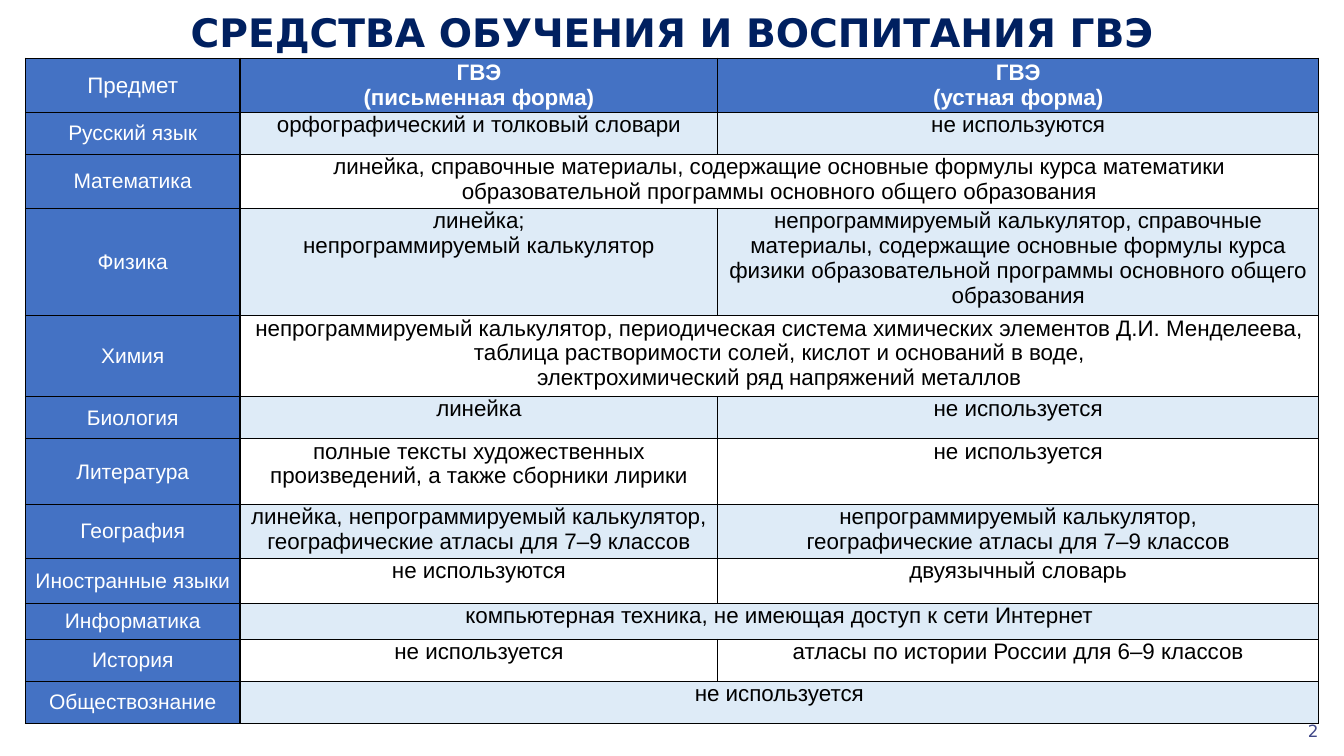
from dataclasses import dataclass

from lxml.etree import SubElement
from pptx import Presentation
from pptx.dml.color import RGBColor
from pptx.enum.text import MSO_ANCHOR as Anchor, PP_ALIGN as Align
from pptx.oxml.ns import qn
from pptx.util import Cm, Pt


@dataclass(frozen=True)
class Theme:
    """Colours, fonts and type sizes of the slide."""
    navy: str = "002060"
    number: str = "404888"
    header: str = "4472C4"
    band: str = "DEEBF7"
    white: str = "FFFFFF"
    black: str = "000000"
    heading_font: str = "DejaVu Sans"
    table_font: str = "Arial"
    title_size: int = 28
    body_size: int = 16
    subject_size: int = 15
    number_size: int = 12
    border: int = 1


THEME = Theme()
COLUMNS = (5.41, 12.04, 15.14)
HEADINGS = ("Предмет", ("ГВЭ", "(письменная форма)"), ("ГВЭ", "(устная форма)"))
SUBJECTS = (
    (1.06, "Русский язык", ["орфографический и толковый словари"], ["не используются"]),
    (1.36, "Математика", ["линейка, справочные материалы, содержащие основные формулы "
                          "курса математики образовательной программы основного "
                          "общего образования"], None),
    (2.7, "Физика", ["линейка;", "непрограммируемый калькулятор"],
     ["непрограммируемый калькулятор, справочные материалы, содержащие основные формулы "
      "курса физики образовательной программы основного общего образования"]),
    (2.04, "Химия", ["непрограммируемый калькулятор, периодическая система химических "
                     "элементов Д.И. Менделеева,",
                     "таблица растворимости солей, кислот и оснований в воде,\n"
                     "электрохимический ряд напряжений металлов"], None),
    (1.06, "Биология", ["линейка"], ["не используется"]),
    (1.66, "Литература", ["полные тексты художественных произведений, а также "
                          "сборники лирики"], ["не используется"]),
    (1.34, "География", ["линейка, непрограммируемый калькулятор,",
                         "географические атласы для 7–9 классов"],
     ["непрограммируемый калькулятор,", "географические атласы для 7–9 классов"]),
    (1.13, "Иностранные языки", ["не используются"], ["двуязычный словарь"]),
    (0.91, "Информатика", ["компьютерная техника, не имеющая доступ к сети Интернет"], None),
    (1.06, "История", ["не используется"], ["атласы по истории России для 6–9 классов"]),
    (1.06, "Обществознание", ["не используется"], None),
)


def write(frame, paragraphs, size, colour, font, bold=False, align=Align.CENTER):
    """Fill a text frame run by run, breaking lines at newlines."""
    for index, text in enumerate(paragraphs):
        paragraph = frame.add_paragraph() if index else frame.paragraphs[0]
        paragraph.alignment = align
        for position, line in enumerate(text.split("\n")):
            if position:
                paragraph.add_line_break()
            run = paragraph.add_run()
            run.text = line
            run.font.size = Pt(size)
            run.font.name = font
            run.font.bold = bold
            run.font.color.rgb = RGBColor.from_string(colour)


def draw_label(slide, box, text, size, colour, align, anchor, bold=False):
    """Place one line of heading-font text in the box."""
    frame = slide.shapes.add_textbox(*map(Cm, box)).text_frame
    frame.word_wrap = True
    frame.vertical_anchor = anchor
    write(frame, [text], size, colour, THEME.heading_font, bold, align)


def style_cell(cell, colour):
    """Set the fill, margins and four borders of a cell."""
    cell.fill.solid()
    cell.fill.fore_color.rgb = RGBColor.from_string(colour)
    cell.margin_left = cell.margin_right = Cm(0.08)
    cell.margin_top = cell.margin_bottom = 0
    properties = cell._tc.get_or_add_tcPr()
    for index, side in enumerate(("lnL", "lnR", "lnT", "lnB")):
        border = SubElement(properties, qn(f"a:{side}"), w=str(Pt(THEME.border)))
        line_fill = SubElement(border, qn("a:solidFill"))
        SubElement(line_fill, qn("a:srgbClr"), val=THEME.black)
        properties.insert(index, border)


def draw_aids_table(slide, left, top):
    """Draw the table of permitted aids from the given corner."""
    heights = (1.36, *(subject[0] for subject in SUBJECTS))
    table = slide.shapes.add_table(
        len(heights), len(COLUMNS), Cm(left), Cm(top),
        Cm(sum(COLUMNS)), Cm(sum(heights))).table
    for column, width in zip(table.columns, COLUMNS):
        column.width = Cm(width)
    for index, (row, height) in enumerate(zip(table.rows, heights)):
        row.height = Cm(height)
        body = THEME.band if index % 2 else THEME.white
        for position, cell in enumerate(row.cells):
            style_cell(cell, body if index and position else THEME.header)

    subject_heading, *form_headings = HEADINGS
    for position, lines in enumerate(([subject_heading], *form_headings)):
        cell = table.cell(0, position)
        cell.vertical_anchor = Anchor.MIDDLE
        write(cell.text_frame, lines, THEME.body_size, THEME.white,
              THEME.table_font, bold=position > 0)

    for index, (_, subject, written, oral) in enumerate(SUBJECTS, start=1):
        name_cell, written_cell, oral_cell = table.rows[index].cells
        name_cell.vertical_anchor = Anchor.MIDDLE
        write(name_cell.text_frame, [subject], THEME.subject_size, THEME.white,
              THEME.table_font)
        if oral is None:
            written_cell.merge(oral_cell)
        for cell, aids in ((written_cell, written), (oral_cell, oral or ())):
            write(cell.text_frame, aids, THEME.body_size, THEME.black, THEME.table_font)


def main():
    """Build the slide and save it."""
    deck = Presentation()
    deck.slide_width, deck.slide_height = Cm(33.87), Cm(19.05)
    slide = deck.slides.add_slide(deck.slide_layouts[6])
    draw_label(slide, (0, 0.08, 33.87, 1.45), "СРЕДСТВА ОБУЧЕНИЯ И ВОСПИТАНИЯ ГВЭ",
               THEME.title_size, THEME.navy, Align.CENTER, Anchor.TOP, bold=True)
    draw_label(slide, (25.86, 17.91, 7.62, 1.02), "2",
               THEME.number_size, THEME.number, Align.RIGHT, Anchor.MIDDLE)
    draw_aids_table(slide, 0.64, 1.47)
    deck.save("out.pptx")


if __name__ == "__main__":
    main()
